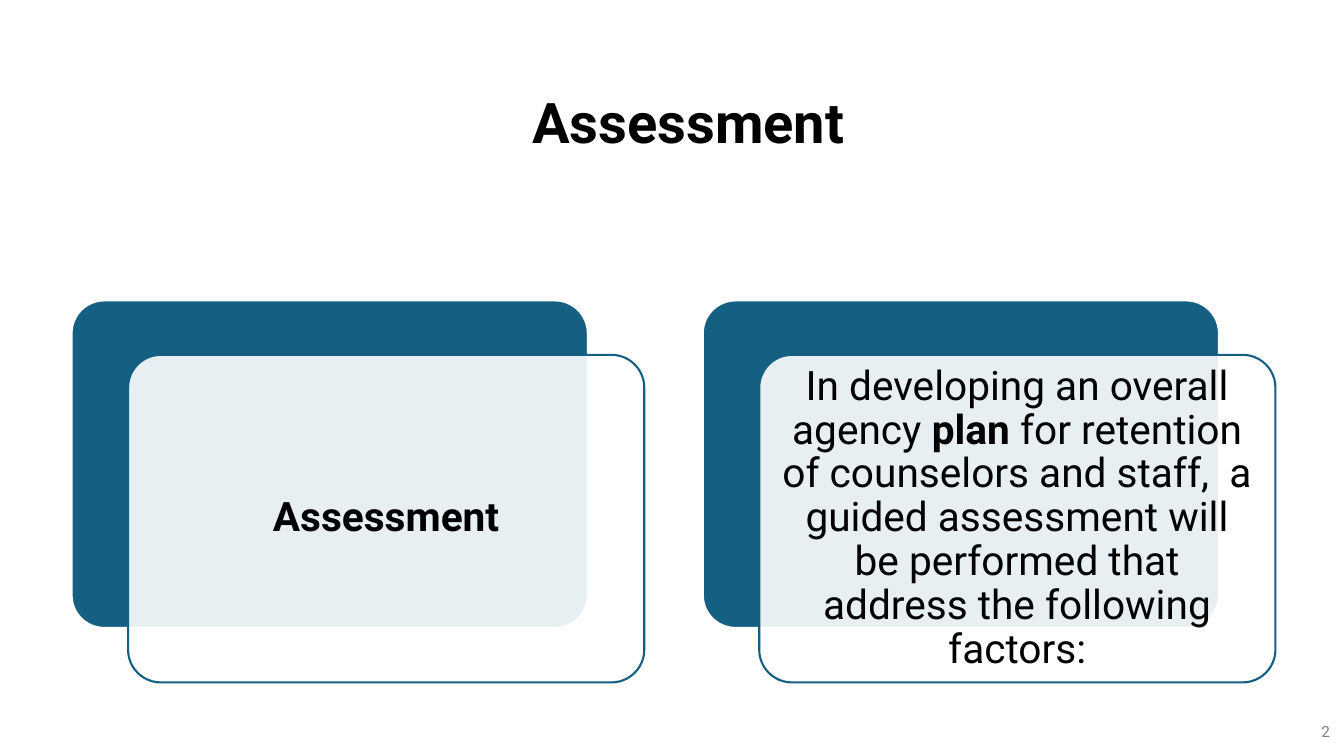
from lxml import etree
from pptx import Presentation
from pptx.dml.color import RGBColor
from pptx.enum.shapes import MSO_SHAPE as Shape
from pptx.enum.text import MSO_ANCHOR as Anchor, PP_ALIGN as Align
from pptx.oxml.ns import qn
from pptx.util import Inches, Pt

FONT = "Roboto"
BLUE, WHITE, BLACK, GRAY = "156082", "FFFFFF", "000000", "808080"
CARD_WIDTH, CARD_HEIGHT = 5.12, 3.25
CARD_TOP, CARD_LEFT, CARD_PITCH = 2.98, 0.71, 6.26
FRONT_SHIFT_X, FRONT_SHIFT_Y, TEXT_INSET = 0.56, 0.54, 0.1
CARDS = [
    [("Assessment", True)],
    [
        ("In developing an overall agency ", False),
        ("plan", True),
        (" for retention of counselors and staff,  a guided assessment "
         "will be performed that address the following factors:", False),
    ],
]


def color(value):
    """Turn a hex string into a colour."""
    return RGBColor.from_string(value)


def add_text(page, box, spans, size, align=Align.CENTER, ink=BLACK,
             spacing=0.9, margins=(0.1, 0.05)):
    """Place one middle-anchored paragraph of (text, bold) spans in the box."""
    frame = page.shapes.add_textbox(*map(Inches, box)).text_frame
    frame.word_wrap = True
    frame.vertical_anchor = Anchor.MIDDLE
    frame.margin_left = frame.margin_right = Inches(margins[0])
    frame.margin_top = frame.margin_bottom = Inches(margins[1])
    para = frame.paragraphs[0]
    para.alignment = align
    para.line_spacing = spacing
    para.font.name = FONT
    para.font.size = Pt(size)
    para.font.color.rgb = color(ink)
    for text, bold in spans:
        span = para.add_run()
        span.text = text
        span.font.bold = bold


def add_panel(page, box, fill, line, opacity=100):
    """Draw a rounded panel with the given fill, outline and opacity."""
    panel = page.shapes.add_shape(Shape.ROUNDED_RECTANGLE, *map(Inches, box))
    panel.adjustments[0] = 0.1
    panel.shadow.inherit = False
    panel.fill.solid()
    panel.fill.fore_color.rgb = color(fill)
    panel.line.color.rgb = color(line)
    panel.line.width = Pt(1.5)
    if opacity < 100:
        tint = panel.fill._xPr.find(qn("a:solidFill"))[0]
        etree.SubElement(tint, qn("a:alpha"), val=str(opacity * 1000))


def add_card(page, box, spans):
    """Layer a translucent text panel over a blue panel placed at the box."""
    left, top, width, height = box
    front_left, front_top = left + FRONT_SHIFT_X, top + FRONT_SHIFT_Y
    add_panel(page, box, BLUE, WHITE)
    add_panel(page, (front_left, front_top, width, height), WHITE, BLUE, 90)
    text_box = (front_left + TEXT_INSET, front_top + TEXT_INSET,
                width - 2 * TEXT_INSET, height - 2 * TEXT_INSET)
    add_text(page, text_box, spans, 29, margins=(0.12, 0.12))


def build_assessment(page):
    """Compose the title, the page number and the row of cards."""
    add_text(page, (1.51, 0.38, 10.63, 1.72), [("Assessment", True)], 40)
    add_text(page, (12.8, 7.06, 0.49, 0.4), [("2", False)], 11,
             Align.RIGHT, GRAY, 1.0)
    for index, spans in enumerate(CARDS):
        left = CARD_LEFT + index * CARD_PITCH
        add_card(page, (left, CARD_TOP, CARD_WIDTH, CARD_HEIGHT), spans)


def main():
    """Build and save the deck."""
    deck = Presentation()
    deck.slide_width, deck.slide_height = Inches(13.33), Inches(7.5)
    build_assessment(deck.slides.add_slide(deck.slide_layouts[6]))
    deck.save("out.pptx")


if __name__ == "__main__":
    main()
